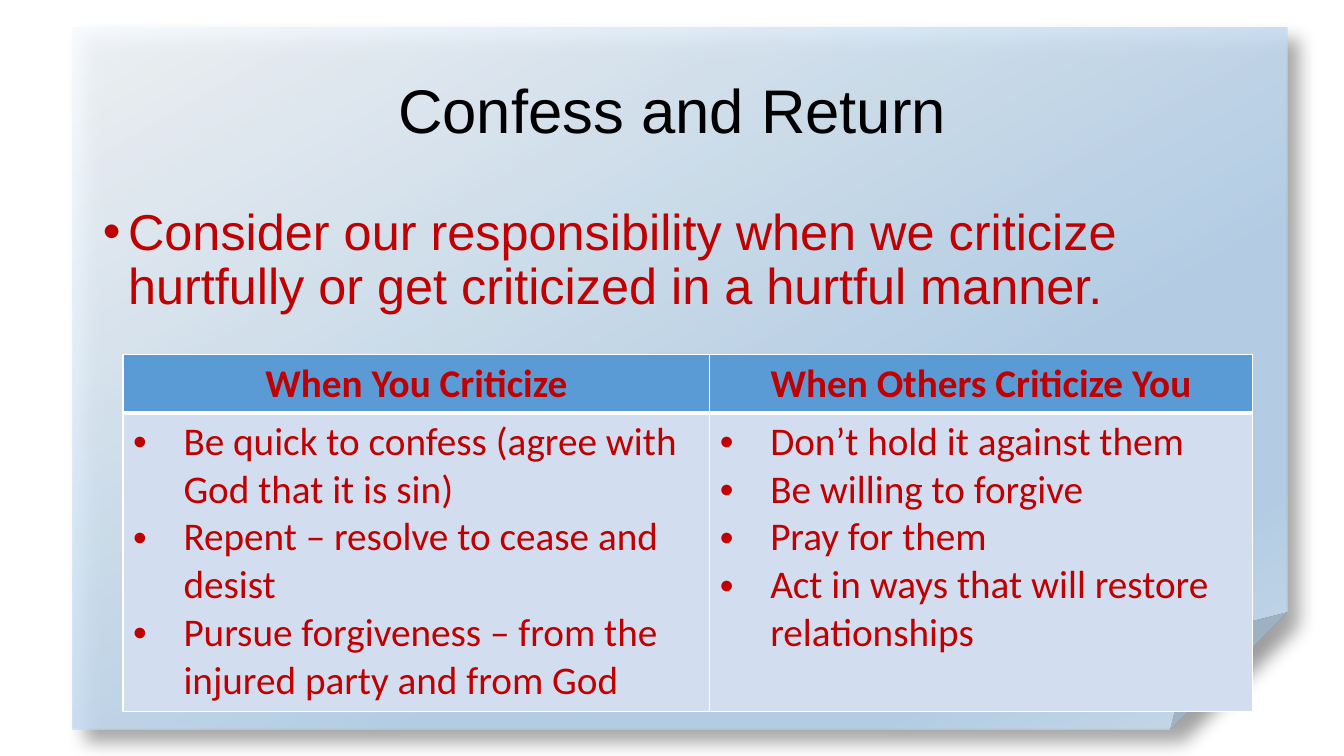
from dataclasses import dataclass
from lxml import etree
from pptx import Presentation
from pptx.dml.color import RGBColor
from pptx.enum.shapes import MSO_SHAPE
from pptx.enum.text import MSO_ANCHOR, MSO_AUTO_SIZE, PP_ALIGN
from pptx.oxml import parse_xml
from pptx.oxml.ns import nsdecls, qn
from pptx.util import Inches, Pt

FOLD = MSO_SHAPE.FOLDED_CORNER
MIDDLE, TOP = MSO_ANCHOR.MIDDLE, MSO_ANCHOR.TOP
CENTER, LEFT = PP_ALIGN.CENTER, PP_ALIGN.LEFT
NO_FIT = MSO_AUTO_SIZE.NONE


@dataclass(frozen=True)
class Theme:
    head: str = "Arial"
    cell: str = "Calibri"
    title: int = 44
    body: int = 36
    table: int = 28
    ink: str = "000000"
    red: str = "C00000"
    rule: str = "FFFFFF"
    band: str = "5B9BD5"
    pale: str = "D2DEEF"
    page: tuple = ((0, "F7FAFD"), (64, "B5D2EC"), (83, "B5D2EC"), (100, "CEE1F2"))


LOOK = Theme()
WIDE, HIGH = 13.33, 7.5
COLUMNS = (
    ("When You Criticize", (
        "Be quick to confess (agree with God that it is sin)",
        "Repent – resolve to cease and desist",
        "Pursue forgiveness – from the injured party and from God")),
    ("When Others Criticize You", (
        "Don’t hold it against them",
        "Be willing to forgive",
        "Pray for them",
        "Act in ways that will restore relationships")),
)


def place(shape, box):
    shape.left, shape.top, shape.width, shape.height = map(Inches, box)


def bullet(para, indent):
    props = para._p.get_or_add_pPr()
    props.set("marL", str(Inches(indent)))
    props.set("indent", str(-Inches(indent)))
    etree.SubElement(props, qn("a:buFont")).set("typeface", "Arial")
    etree.SubElement(props, qn("a:buChar")).set("char", "•")


def write(para, text, font, size, color, bold=False, align=LEFT):
    para.alignment = align
    run = para.add_run()
    run.text = text
    run.font.name, run.font.size, run.font.bold = font, Pt(size), bold
    run.font.color.rgb = RGBColor.from_string(color)


def add_page(slide, box):
    page = slide.shapes.add_shape(FOLD, *map(Inches, box))
    page.line.fill.background()
    stops = "".join(
        f'<a:gs pos="{pos * 1000}"><a:srgbClr val="{color}">'
        '<a:alpha val="87000"/></a:srgbClr></a:gs>' for pos, color in LOOK.page)
    fill = parse_xml(
        f'<a:gradFill {nsdecls("a")} rotWithShape="1"><a:gsLst>{stops}</a:gsLst>'
        '<a:lin ang="3600000" scaled="0"/></a:gradFill>')
    shadow = parse_xml(
        f'<a:effectLst {nsdecls("a")}><a:outerShdw blurRad="{Pt(13)}" dist="{Pt(13)}" '
        'dir="2700000" algn="tl" rotWithShape="0"><a:srgbClr val="000000">'
        '<a:alpha val="40000"/></a:srgbClr></a:outerShdw></a:effectLst>')
    props = page._element.spPr
    props.find(qn("a:prstGeom")).addnext(fill)
    props.append(shadow)
    slide.shapes._spTree.insert(2, page._element)


def add_title(shape, box, text):
    place(shape, box)
    frame = shape.text_frame
    frame.auto_size, frame.vertical_anchor = NO_FIT, MIDDLE
    para = frame.paragraphs[0]
    para.line_spacing = 0.9
    write(para, text, LOOK.head, LOOK.title, LOOK.ink, align=CENTER)


def add_body(shape, box, text):
    place(shape, box)
    frame = shape.text_frame
    frame.auto_size, frame.vertical_anchor = NO_FIT, TOP
    para = frame.paragraphs[0]
    para.line_spacing, para.space_before = 0.9, Pt(0)
    bullet(para, 0.25)
    write(para, text, LOOK.head, LOOK.body, LOOK.red)


def style(cell, fill, thick):
    props = cell._tc.get_or_add_tcPr()
    for side in "LRTB":
        width = Pt(3 if side == thick else 1)
        props.append(parse_xml(
            f'<a:ln{side} {nsdecls("a")} w="{width}"><a:solidFill>'
            f'<a:srgbClr val="{LOOK.rule}"/></a:solidFill></a:ln{side}>'))
    cell.fill.solid()
    cell.fill.fore_color.rgb = RGBColor.from_string(fill)


def add_grid(slide, box, widths, heights):
    grid = slide.shapes.add_table(2, len(COLUMNS), *map(Inches, box)).table
    for row, height in zip(grid.rows, heights):
        row.height = Inches(height)
    for col, (head, items) in enumerate(COLUMNS):
        grid.columns[col].width = Inches(widths[col])
        top, low = grid.cell(0, col), grid.cell(1, col)
        style(top, LOOK.band, "B")
        style(low, LOOK.pale, "T")
        write(top.text_frame.paragraphs[0], head, LOOK.cell, LOOK.table,
              LOOK.red, True, CENTER)
        frame = low.text_frame
        for num, item in enumerate(items):
            para = frame.add_paragraph() if num else frame.paragraphs[0]
            bullet(para, 0.5)
            write(para, item, LOOK.cell, LOOK.table, LOOK.red)


def main():
    deck = Presentation()
    deck.slide_width, deck.slide_height = Inches(WIDE), Inches(HIGH)
    slide = deck.slides.add_slide(deck.slide_layouts[1])
    title, body = slide.placeholders
    add_page(slide, (0.72, 0.27, 12.05, 6.97))
    add_title(title, (0.92, 0.4, 11.5, 1.45), "Confess and Return")
    add_body(body, (0.92, 2, 11.5, 4.76),
             "Consider our responsibility when we criticize hurtfully "
             "or get criticized in a hurtful manner.")
    add_grid(slide, (1.22, 3.52, 11.2, 3.53), (5.82, 5.38), (0.57, 2.96))
    deck.save("out.pptx")


if __name__ == "__main__":
    main()
